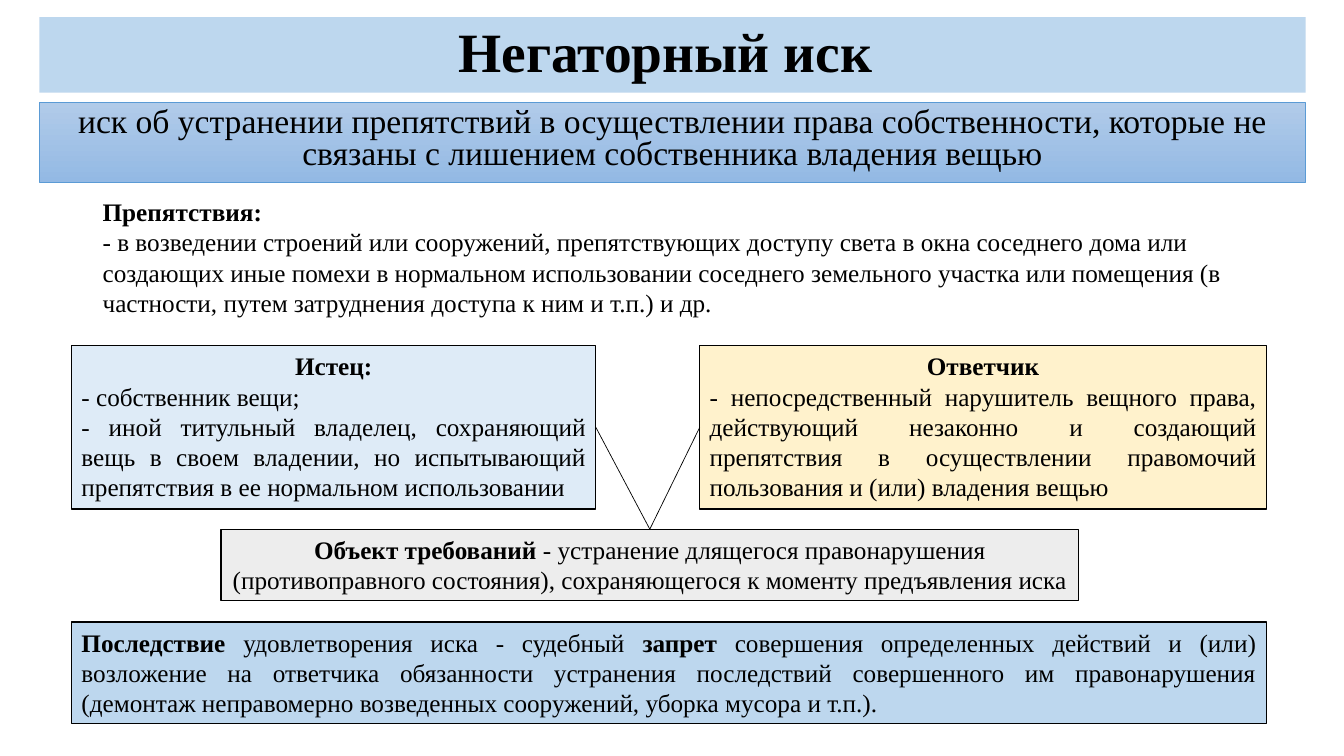
from pptx import Presentation, util as u
from pptx.dml.color import RGBColor
from pptx.enum import shapes, text
from pptx.oxml.ns import qn
from lxml import etree

PX = 9144
LEFT, CENTER, JUSTIFY = text.PP_ALIGN.LEFT, text.PP_ALIGN.CENTER, text.PP_ALIGN.JUSTIFY


def color(value):
    return RGBColor.from_string(value)


def add_block(place, fill, line_width, paragraphs, size=18, anchor=text.MSO_ANCHOR.TOP):
    block = slide.shapes.add_shape(shapes.MSO_SHAPE.RECTANGLE, *[n * PX for n in place])
    block.shadow.inherit = False
    if fill:
        block.fill.solid()
        block.fill.fore_color.rgb = color(fill)
    else:
        block.fill.background()
    if line_width:
        block.line.color.rgb = color("000000")
        block.line.width = u.Pt(line_width)
    else:
        block.line.fill.background()
    frame = block.text_frame
    frame.word_wrap = True
    frame.vertical_anchor = anchor
    for index, (align, runs) in enumerate(paragraphs):
        paragraph = frame.add_paragraph() if index else frame.paragraphs[0]
        paragraph.alignment = align
        for words, bold in runs:
            run = paragraph.add_run()
            run.text = words
            run.font.name = "Times New Roman"
            run.font.size = u.Pt(size)
            run.font.bold = bold
            run.font.color.rgb = color("000000")
    return block


deck = Presentation()
deck.slide_width, deck.slide_height = 1333 * PX, 750 * PX
slide = deck.slides.add_slide(deck.slide_layouts[6])

title = add_block((39, 17, 1256, 75), "BDD7EE", 0,
                  [(CENTER, [("Негаторный иск ", True)])], 39.6, text.MSO_ANCHOR.MIDDLE)
title.text_frame.paragraphs[0].line_spacing = 0.9

definition = add_block((39, 102, 1256, 79), None, 0.5, [
    (CENTER, [("иск об устранении препятствий в осуществлении права собственности, "
               "которые не связаны с лишением собственника владения вещью", False)])], 24)
definition.text_frame.paragraphs[0].line_spacing = 0.8
definition.line.color.rgb = color("5B9BD5")
definition.fill.gradient()
definition.fill.gradient_angle = 270
for stop, shade in zip(definition.fill.gradient_stops, ("B1CBE9", "93B9E4")):
    stop.color.rgb = color(shade)
definition.fill.gradient_stops[0].position = 0
definition.fill.gradient_stops[1].position = 1

add_block((92, 190, 1150, 131), None, 0, [
    (LEFT, [("Препятствия:", True)]),
    (LEFT, [("- в возведении строений или сооружений, препятствующих доступу света в окна "
             "соседнего дома или создающих иные помехи в нормальном использовании соседнего "
             "земельного участка или помещения (в частности, путем затруднения доступа к ним "
             "и т.п.) и др.", False)])])

plaintiff = add_block((71, 343, 520, 162), "DEEBF7", 1, [
    (CENTER, [("Истец:", True)]),
    (JUSTIFY, [("- собственник вещи;", False)]),
    (JUSTIFY, [("- иной титульный владелец, сохраняющий вещь в своем владении, но испытывающий "
                "препятствия в ее нормальном использовании", False)])])

defendant = add_block((694, 343, 562, 162), "FFF2CC", 1, [
    (CENTER, [("Ответчик", True)]),
    (JUSTIFY, [("- непосредственный нарушитель вещного права, действующий незаконно и создающий "
                "препятствия в осуществлении правомочий пользования и (или) владения вещью",
                False)])])

claim = add_block((219, 525, 851, 71), "EDEDED", 1, [
    (CENTER, [("Объект требований ", True),
              ("- устранение длящегося правонарушения (противоправного состояния), "
               "сохраняющегося к моменту предъявления иска", False)])])

for party, side in ((plaintiff, 3), (defendant, 1)):
    link = slide.shapes.add_connector(shapes.MSO_CONNECTOR.STRAIGHT, 0, 0, 0, 0)
    link.begin_connect(party, side)
    link.end_connect(claim, 0)
    link.line.color.rgb = color("000000")
    link.line.width = u.Pt(0.5)
    etree.SubElement(link.element.spPr, qn("a:effectLst"))

add_block((71, 617, 1185, 101), "BDD7EE", 1, [
    (JUSTIFY, [("Последствие", True),
               (" удовлетворения иска - судебный ", False),
               ("запрет ", True),
               ("совершения определенных действий и (или) возложение на ответчика обязанности "
                "устранения последствий совершенного им правонарушения (демонтаж неправомерно "
                "возведенных сооружений, уборка мусора и т.п.).", False)])])

deck.save("out.pptx")
